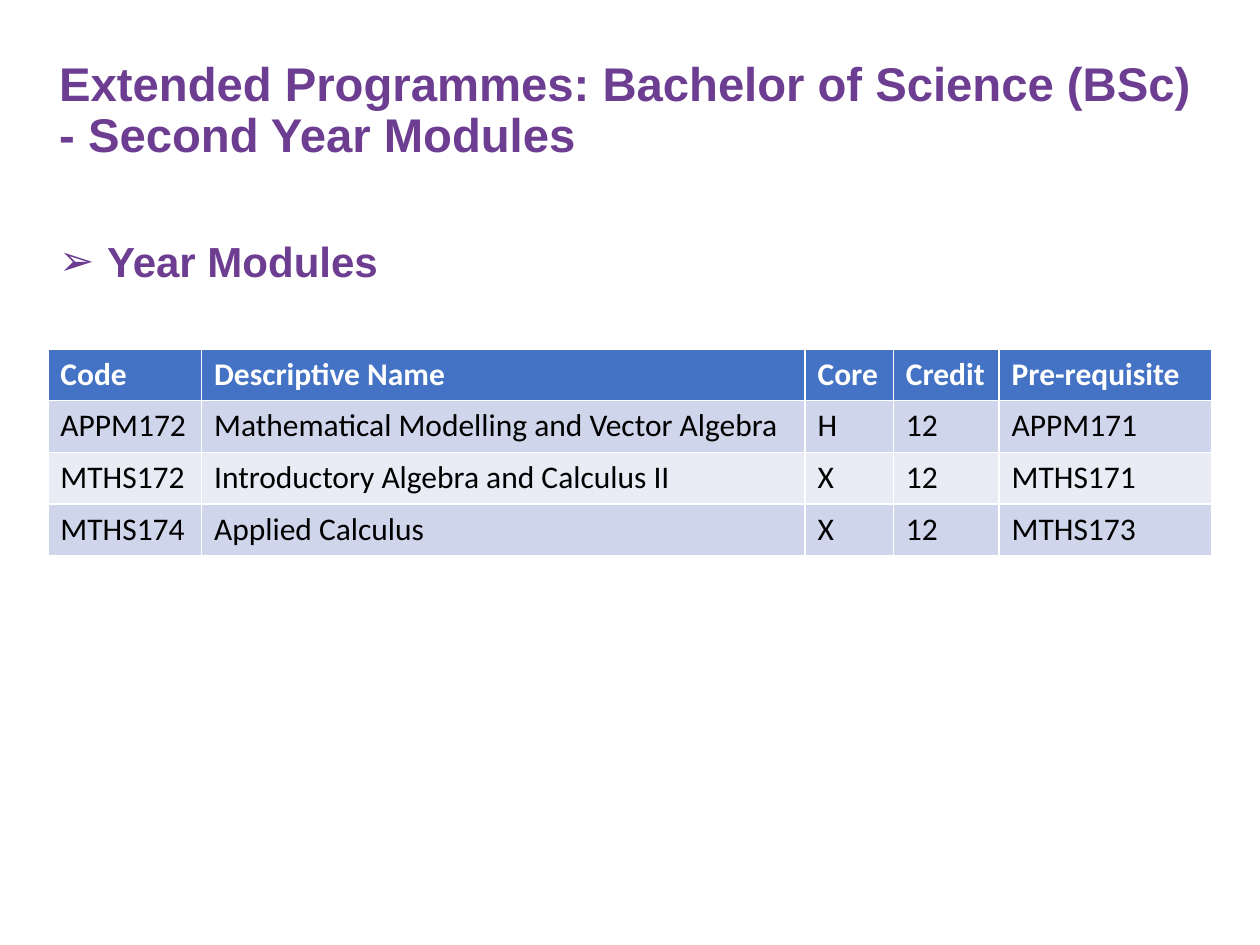
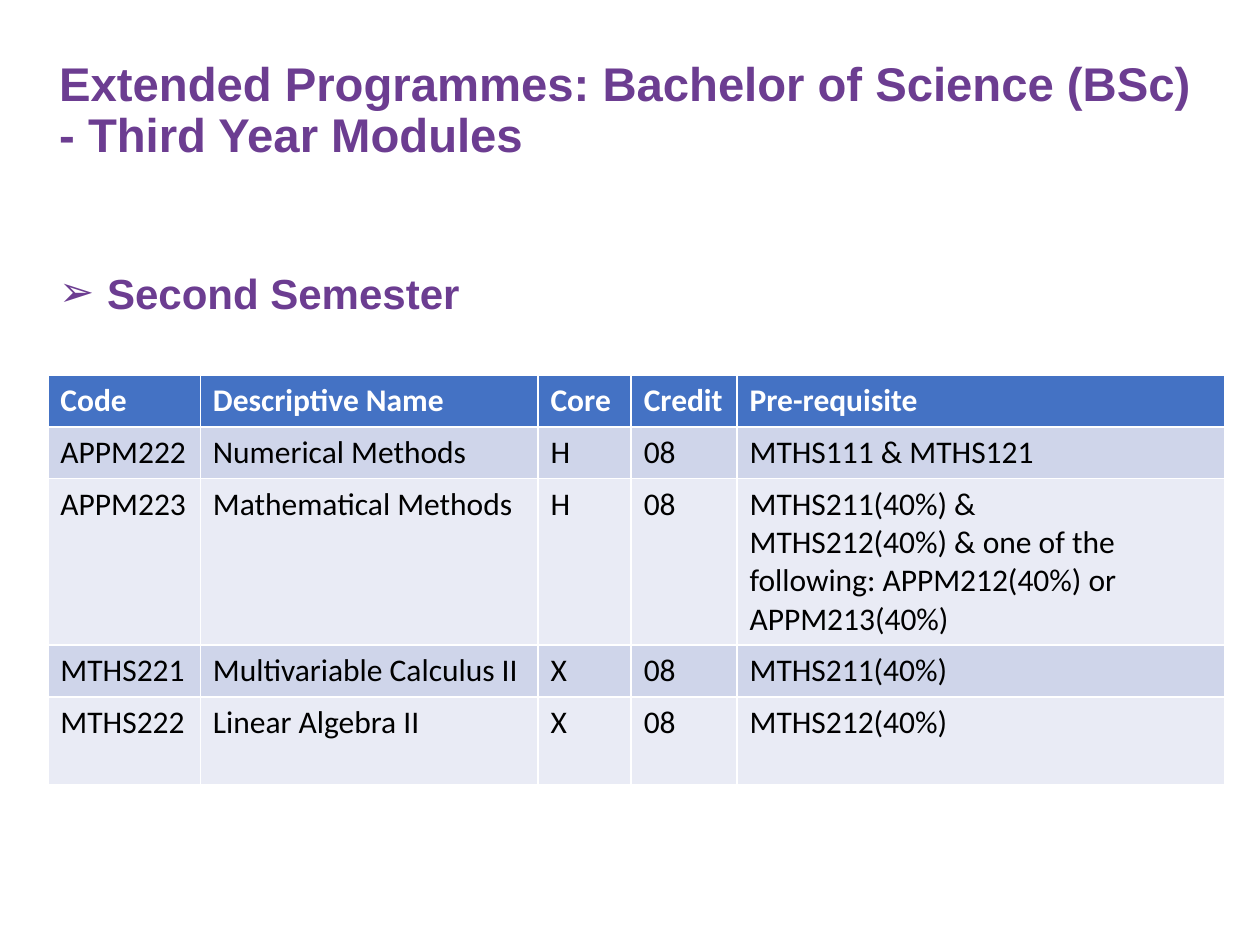
from copy import deepcopy

from lxml.etree import SubElement
from pptx import Presentation
from pptx.dml.color import RGBColor
from pptx.enum.text import MSO_ANCHOR, MSO_AUTO_SIZE, PP_ALIGN
from pptx.oxml.ns import qn
from pptx.util import Inches, Pt

PURPLE = RGBColor(0x6C, 0x3D, 0x91)
BLUE = RGBColor(0x44, 0x72, 0xC4)
WHITE = RGBColor(0xFF, 0xFF, 0xFF)
BLACK = RGBColor(0, 0, 0)
BANDS = (RGBColor(0xCF, 0xD5, 0xEA), RGBColor(0xE9, 0xEB, 0xF5))

COLS, ROWS = 100, 75
LEFT, LINE = 3.7, 4.1
HEAD = ("Code", "Descriptive Name", "Core", "Credit", "Pre-requisite")

SECOND = (
    ("APPM172", "Mathematical Modelling and Vector Algebra", "H", "12", "APPM171"),
    ("MTHS172", "Introductory Algebra and Calculus II", "X", "12", "MTHS171"),
    ("MTHS174", "Applied Calculus", "X", "12", "MTHS173"),
)
THIRD = (
    ("APPM222", "Numerical Methods", "H", "08", "MTHS111 & MTHS121"),
    ("APPM223", "Mathematical Methods", "H", "08",
     "MTHS211(40%) &\nMTHS212(40%) & one of the following: APPM212(40%) or APPM213(40%)"),
    ("MTHS221", "Multivariable Calculus II", "X", "08", "MTHS211(40%)"),
    ("MTHS222", "Linear Algebra II", "X", "08", "MTHS212(40%)"),
)


def write(frame, text, size=18, font="Calibri", color=BLACK, bold=False, lead=1.0):
    """Fill a text frame and format each paragraph and run in it."""
    frame.text = text
    for para in frame.paragraphs:
        para.alignment = PP_ALIGN.LEFT
        para.space_before = Pt(0)
        para.line_spacing = lead
        for run in para.runs:
            run.font.size, run.font.name = Pt(size), font
            run.font.color.rgb, run.font.bold = color, bold
        for gap in para._p.findall(qn("a:br")):
            gap.append(deepcopy(para.runs[0]._r.rPr))


class Deck:
    """Hold the shared style and the current slide."""

    def __init__(self):
        """Start a deck with its slide size and grid."""
        self.show = Presentation()
        self.show.slide_width, self.show.slide_height = Inches(10), Inches(7.5)
        self.style = dict(font="Arial", color=PURPLE, bold=True)

    def x(self, cols):
        """Turn grid columns into a length."""
        return round(self.show.slide_width * cols / COLS)

    def y(self, rows):
        """Turn grid rows into a length."""
        return round(self.show.slide_height * rows / ROWS)

    def place(self, shape, top, wide, high):
        """Set a holder on the left edge of the grid."""
        shape.left, shape.top = self.x(LEFT), self.y(top)
        shape.width, shape.height = self.x(wide), self.y(high)
        shape.text_frame.auto_size = MSO_AUTO_SIZE.NONE
        return shape.text_frame

    def title(self, year):
        """Add a slide and its title."""
        self.slide = self.show.slides.add_slide(self.show.slide_layouts[1])
        frame = self.place(self.slide.shapes.title, 4, 92.5, 9.8)
        frame.vertical_anchor = MSO_ANCHOR.MIDDLE
        text = f"Extended Programmes: Bachelor of Science (BSc)\v- {year} Year Modules"
        write(frame, text, size=27, lead=0.9, **self.style)

    def point(self, text, top, wide):
        """Write the arrow bullet above the table."""
        frame = self.place(self.slide.placeholders[1], top, wide, 5)
        write(frame, text, size=24, **self.style)
        props = frame.paragraphs[0]._p.get_or_add_pPr()
        props.set("marL", str(Inches(0.38)))
        props.set("indent", str(-Inches(0.38)))
        SubElement(props, qn("a:buFont")).set("typeface", "Arial")
        SubElement(props, qn("a:buChar")).set("char", "➢")

    def table(self, data, top, wides, highs):
        """Add a table with a blue head and banded rows."""
        lines = (HEAD, *data)
        grid = self.slide.shapes.add_table(
            len(lines), len(HEAD), self.x(LEFT + 0.1), self.y(top),
            self.x(sum(wides)), self.y(sum(highs))).table
        for col, wide in zip(grid.columns, wides):
            col.width = self.x(wide)
        for i, (row, high, line) in enumerate(zip(grid.rows, highs, lines)):
            row.height = self.y(high)
            head = i == 0
            for cell, text in zip(row.cells, line):
                cell.fill.solid()
                cell.fill.fore_color.rgb = BLUE if head else BANDS[(i - 1) % 2]
                write(cell.text_frame, text, color=WHITE if head else BLACK, bold=head)


def main():
    """Build both slides and save them."""
    deck = Deck()
    deck.title("Second")
    deck.point("Year Modules", 18.2, 91.8)
    deck.table(SECOND, 27.7, (12.2, 47.9, 7, 8.4, 16.9), [LINE] * 4)
    deck.title("Third")
    deck.point("Second Semester", 20.7, 34.1)
    deck.table(THIRD, 29.8, (12.1, 26.8, 7.4, 8.4, 38.7), (LINE, LINE, 13, LINE, 7))
    deck.show.save("out.pptx")


if __name__ == "__main__":
    main()
